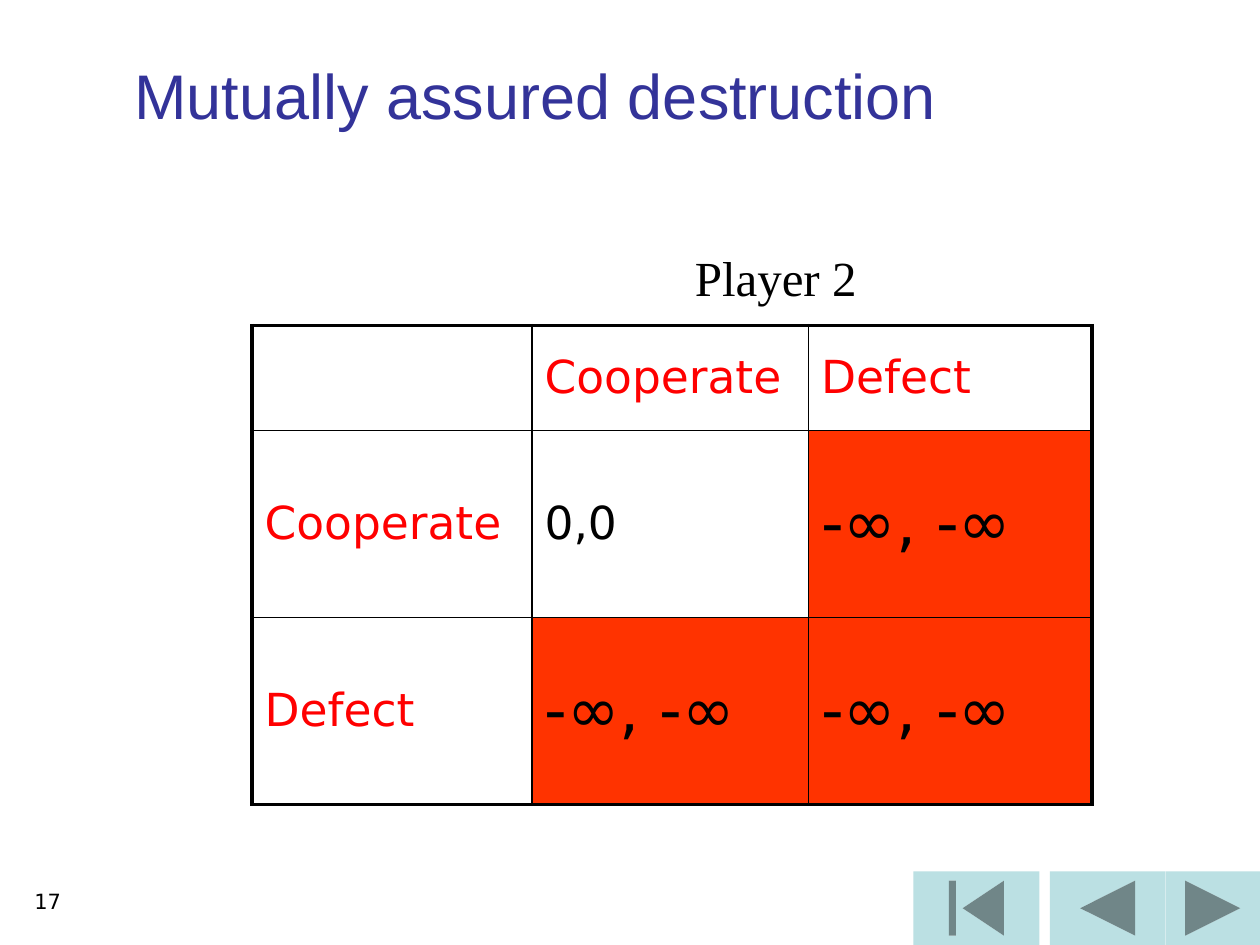
from lxml import etree
from pptx import Presentation
from pptx.dml.color import RGBColor
from pptx.enum.shapes import MSO_SHAPE
from pptx.enum.text import MSO_ANCHOR, MSO_AUTO_SIZE, PP_ALIGN
from pptx.oxml.ns import qn
from pptx.util import Pt

BACK = MSO_SHAPE.ACTION_BUTTON_BACK_OR_PREVIOUS
START = MSO_SHAPE.ACTION_BUTTON_BEGINNING
NEXT = MSO_SHAPE.ACTION_BUTTON_FORWARD_OR_NEXT
MIDDLE = MSO_ANCHOR.MIDDLE
GROW = MSO_AUTO_SIZE.SHAPE_TO_FIT_TEXT
NO_FIT = MSO_AUTO_SIZE.NONE
LEFT, CENTER, RIGHT = PP_ALIGN.LEFT, PP_ALIGN.CENTER, PP_ALIGN.RIGHT

SANS = "DejaVu Sans"
BLACK, WHITE, RED = "000000", "FFFFFF", "FF0000"
NAVY, ORANGE, TEAL = "333399", "FF3300", "BBE0E3"

LOSS = "-∞, -∞"
GRID = [
    ["", "Cooperate", "Defect"],
    ["Cooperate", "0,0", LOSS],
    ["Defect", LOSS, LOSS],
]
COLS = [160, 158, 162]
ROWS = [60, 106.8, 106.8]


def tint(code):
    return RGBColor.from_string(code)


def write(frame, text, size, font, color, align=LEFT):
    para = frame.paragraphs[0]
    para.alignment = align
    run = para.add_run()
    run.text = text
    run.font.size = Pt(size)
    run.font.name = font
    run.font.bold = False
    run.font.color.rgb = tint(color)
    return para


def add_button(slide, kind, left, width):
    shape = slide.shapes.add_shape(kind, Pt(left), Pt(498), Pt(width), Pt(42))
    shape.shadow.inherit = False
    shape.fill.solid()
    shape.fill.fore_color.rgb = tint(TEAL)
    shape.line.fill.background()


def add_title(slide, text):
    title = slide.shapes.title
    title.left, title.top = Pt(0), Pt(-12)
    title.width, title.height = Pt(612), Pt(132)
    frame = title.text_frame
    frame.vertical_anchor = MIDDLE
    frame.auto_size = NO_FIT
    write(frame, text, 36, "Arial", NAVY, CENTER)


def add_label(slide, text, box, size, font, align=LEFT, fit=NO_FIT):
    frame = slide.shapes.add_textbox(*map(Pt, box)).text_frame
    frame.word_wrap = True
    frame.auto_size = fit
    write(frame, text, size, font, BLACK, align)


def add_edge(cell, side, width):
    props = cell._tc.get_or_add_tcPr()
    line = etree.SubElement(props, qn("a:ln" + side), w=str(Pt(width)))
    fill = etree.SubElement(line, qn("a:solidFill"))
    etree.SubElement(fill, qn("a:srgbClr"), val=BLACK)


def fill_cell(cell, text, row, col):
    outer = {"L": col == 0, "R": col == 2, "T": row == 0, "B": row == 2}
    for side, thick in outer.items():
        add_edge(cell, side, 2.25 if thick else 1)
    cell.vertical_anchor = MIDDLE
    if row and col:
        cell.fill.solid()
        cell.fill.fore_color.rgb = tint(ORANGE if text == LOSS else WHITE)
    else:
        cell.fill.background()
    if text:
        size = 36 if text == LOSS else 26
        color = BLACK if row and col else RED
        para = write(cell.text_frame, text, size, SANS, color)
        para.space_before = Pt(size * 0.2)


def add_game(slide):
    frame = slide.shapes.add_table(
        len(ROWS), len(COLS), Pt(144), Pt(186), Pt(sum(COLS)), Pt(sum(ROWS))
    )
    table = frame.table
    table.first_row = False
    table.horz_banding = False
    for col, width in zip(table.columns, COLS):
        col.width = Pt(width)
    for row, height in zip(table.rows, ROWS):
        row.height = Pt(height)
    for row, texts in enumerate(GRID):
        for col, text in enumerate(texts):
            fill_cell(table.cell(row, col), text, row, col)


def main():
    deck = Presentation()
    deck.slide_width, deck.slide_height = Pt(720), Pt(540)
    slide = deck.slides.add_slide(deck.slide_layouts[5])
    add_button(slide, BACK, 600, 66)
    add_button(slide, START, 522, 72)
    add_button(slide, NEXT, 666, 54)
    add_label(slide, "17", (-108, 504, 150, 36), 12, SANS, RIGHT)
    add_title(slide, "Mutually assured destruction")
    add_game(slide)
    add_label(slide, "Player 2", (390, 138, 124, 41), 28, "Times New Roman", fit=GROW)
    deck.save("out.pptx")


if __name__ == "__main__":
    main()
